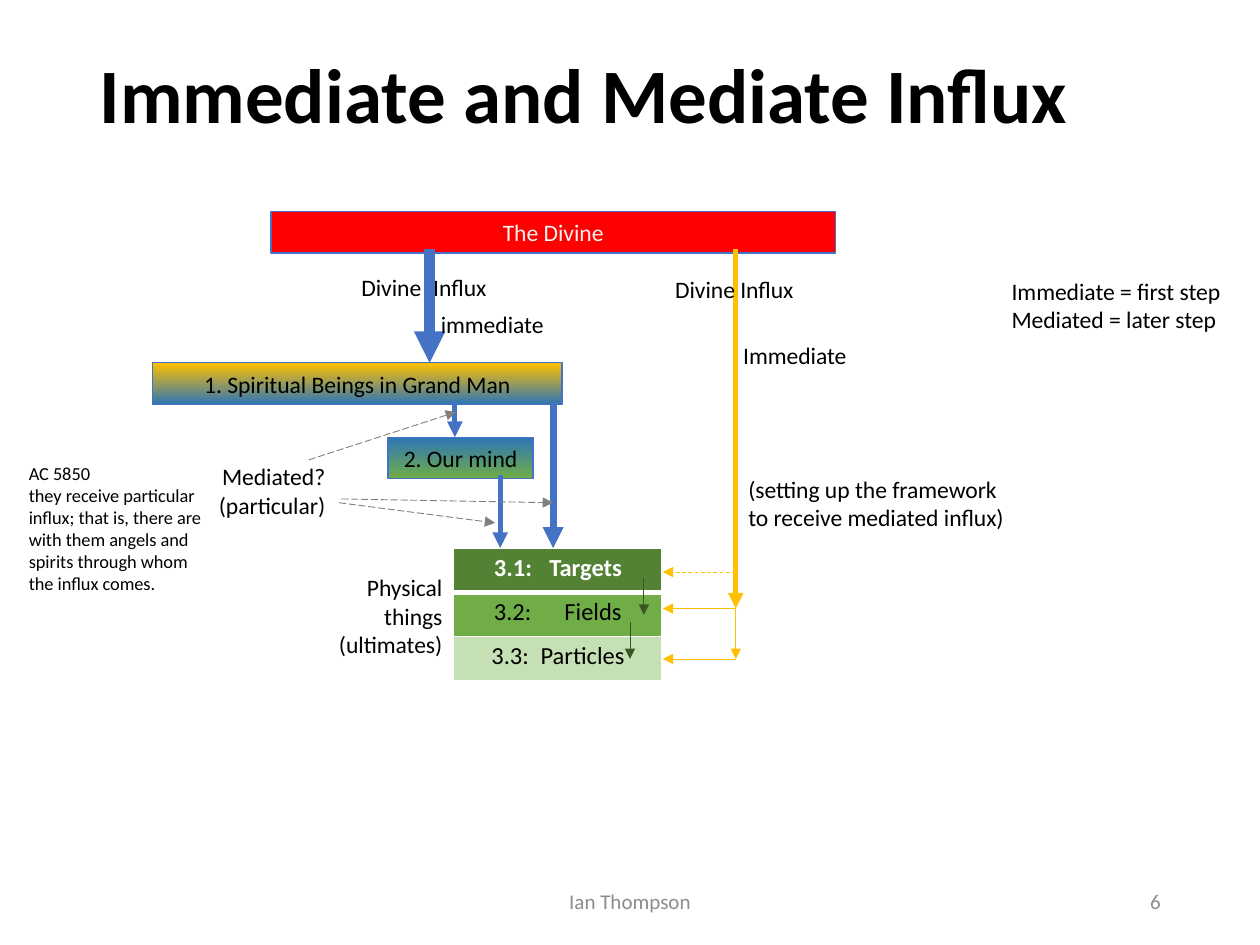
from dataclasses import dataclass

from lxml.etree import SubElement
from pptx import Presentation
from pptx.dml.color import RGBColor
from pptx.enum.dml import MSO_LINE
from pptx.enum.shapes import MSO_CONNECTOR, MSO_SHAPE
from pptx.enum.text import MSO_ANCHOR, MSO_AUTO_SIZE, PP_ALIGN
from pptx.oxml.ns import qn
from pptx.util import Emu, Pt

PX = 9144  # 100 px to the inch


@dataclass(frozen=True)
class Theme:
    font: str = "Calibri"
    black: str = "000000"
    white: str = "FFFFFF"
    pale: str = "F2F2F2"
    grey: str = "808080"
    footer: str = "8C8C8C"
    red: str = "FF0000"
    blue: str = "4472C4"
    deep_blue: str = "2E75B6"
    gold: str = "FFC000"
    green: str = "70AD47"
    dark_green: str = "548235"
    light_green: str = "C5E0B4"
    forest: str = "385723"
    title_size: float = 44
    table_size: float = 14
    text_size: float = 13.5
    footer_size: float = 12
    note_size: float = 10.5


THEME = Theme()


@dataclass(frozen=True)
class Bar:
    text: str
    frame: tuple[int, int, int, int]
    fills: tuple[str, ...]
    color: str = THEME.black


@dataclass(frozen=True)
class Label:
    paras: tuple[str, ...]
    frame: tuple[int, int, int, int]
    align: PP_ALIGN = PP_ALIGN.LEFT
    size: float = THEME.text_size
    color: str = THEME.black
    wrap: bool = False
    anchor: MSO_ANCHOR = MSO_ANCHOR.TOP
    tab: int = 0


@dataclass(frozen=True)
class Arrow:
    start: tuple[int, int]
    end: tuple[int, int]
    color: str = THEME.gold
    width: float = 0.5
    dash: MSO_LINE | None = None


@dataclass(frozen=True)
class Level:
    number: str
    name: str
    fill: str
    color: str
    indent: int
    tab: int
    rule: float = 1


BARS = (
    Bar("The Divine", (215, 168, 448, 33), (THEME.red,), THEME.pale),
    Bar("1. Spiritual Beings in Grand Man", (121, 288, 325, 33), (THEME.gold, THEME.deep_blue)),
    Bar("2. Our mind", (308, 347, 115, 33), (THEME.deep_blue, THEME.green)),
)
LEVELS = (
    Level("3.1:", "Targets", THEME.dark_green, THEME.white, 32, 44, 3),
    Level("3.2:", "Fields", THEME.green, THEME.black, 32, 56),
    Level("3.3:", "Particles", THEME.light_green, THEME.black, 30, 39),
)
LABEL_UNDER_ARROW = Label(("Divine\tInflux",), (277, 212, 120, 33), tab=57)
LABELS = (
    Label(("immediate",), (340, 241, 103, 33)),
    Label(("Mediated?", "(particular)"), (162, 362, 106, 56), PP_ALIGN.RIGHT),
    Label(("Immediate",), (580, 266, 103, 33)),
    Label(("Divine Influx",), (526, 213, 116, 33)),
    Label(("Physical\nthings", "(ultimates)"), (257, 450, 104, 78), PP_ALIGN.RIGHT),
    Label(("AC 5850", "they receive particular influx; that is, there are with them angels "
           "and spirits through whom the influx comes."),
          (13, 362, 165, 116), size=THEME.note_size, wrap=True),
    Label(("(setting up the framework\nto receive mediated influx)",), (584, 372, 225, 56)),
    Label(("Immediate = first step", "Mediated = later step"), (793, 215, 188, 56)),
    Label(("6",), (706, 695, 225, 40), PP_ALIGN.RIGHT, THEME.footer_size, THEME.footer,
          True, MSO_ANCHOR.MIDDLE),
    Label(("Ian Thompson",), (331, 695, 338, 40), PP_ALIGN.CENTER, THEME.footer_size,
          THEME.footer, True, MSO_ANCHOR.MIDDLE),
)
TRUNK_X, LEVEL_X = 584, 526  # immediate influx line, right side of the levels
ARROWS = (
    # Influx passed down through the bars
    Arrow((341, 198), (341, 288), THEME.blue, 6),
    Arrow((361, 318), (361, 347), THEME.blue, 3),
    Arrow((397, 377), (397, 435), THEME.blue, 3),
    Arrow((439, 320), (439, 435), THEME.blue, 4),
    # Immediate influx into each level
    Arrow((TRUNK_X, 198), (TRUNK_X, 483), width=3),
    Arrow((TRUNK_X, 483), (TRUNK_X, 523)),
    Arrow((TRUNK_X, 454), (LEVEL_X, 454), dash=MSO_LINE.DASH),
    Arrow((TRUNK_X, 483), (LEVEL_X, 483)),
    Arrow((TRUNK_X, 523), (LEVEL_X, 523)),
    # Pointers from "Mediated?"
    Arrow((269, 399), (393, 415), THEME.grey, dash=MSO_LINE.LONG_DASH),
    Arrow((271, 396), (439, 399), THEME.grey, dash=MSO_LINE.LONG_DASH),
    Arrow((245, 365), (362, 327), THEME.grey, dash=MSO_LINE.LONG_DASH),
    # Steps between levels
    Arrow((511, 459), (511, 488), THEME.forest),
    Arrow((500, 494), (500, 523), THEME.forest),
)


def px(*values: int) -> list[Emu]:
    return [Emu(value * PX) for value in values]


def rgb(color: str) -> RGBColor:
    return RGBColor.from_string(color)


def add_span(para, text: str, size: float, color: str, bold: bool = False) -> None:
    for index, line in enumerate(text.split("\n")):
        if index:
            para.add_line_break()
        span = para.add_run()
        span.text = line
        span.font.name, span.font.size, span.font.bold = THEME.font, Pt(size), bold
        span.font.color.rgb = rgb(color)


def set_tab(para, position: int) -> None:
    tabs = SubElement(para._p.get_or_add_pPr(), qn("a:tabLst"))
    SubElement(tabs, qn("a:tab"), pos=str(position * PX), algn="l")


def draw_title(slide, text: str) -> None:
    title = slide.shapes.title
    title.left, title.top, title.width, title.height = px(69, 40, 862, 145)
    frame = title.text_frame
    frame.vertical_anchor, frame.auto_size = MSO_ANCHOR.TOP, MSO_AUTO_SIZE.NONE
    para = frame.paragraphs[0]
    para.alignment, para.line_spacing = PP_ALIGN.LEFT, 0.9
    add_span(para, text, THEME.title_size, THEME.black, True)


def draw_bar(slide, bar: Bar) -> None:
    box = slide.shapes.add_shape(MSO_SHAPE.RECTANGLE, *px(*bar.frame))
    box.shadow.inherit = False
    box.line.color.rgb, box.line.width = rgb(THEME.blue), Pt(0.75)
    if len(bar.fills) == 1:
        box.fill.solid()
        box.fill.fore_color.rgb = rgb(bar.fills[0])
    else:
        box.fill.gradient()
        box.fill.gradient_angle = 270
        for stop, color in zip(box.fill.gradient_stops, bar.fills):
            stop.color.rgb = rgb(color)
    para = box.text_frame.paragraphs[0]
    para.alignment = PP_ALIGN.CENTER
    add_span(para, bar.text, THEME.text_size, bar.color)


def draw_label(slide, label: Label) -> None:
    frame = slide.shapes.add_textbox(*px(*label.frame)).text_frame
    frame.word_wrap, frame.vertical_anchor = label.wrap, label.anchor
    for index, text in enumerate(label.paras):
        para = frame.add_paragraph() if index else frame.paragraphs[0]
        para.alignment = label.align
        if label.tab:
            set_tab(para, label.tab)
        add_span(para, text, label.size, label.color)


def draw_arrow(slide, arrow: Arrow) -> None:
    line = slide.shapes.add_connector(MSO_CONNECTOR.STRAIGHT, *px(*arrow.start, *arrow.end))
    line.line.color.rgb, line.line.width = rgb(arrow.color), Pt(arrow.width)
    if arrow.dash:
        line.line.dash_style = arrow.dash
    SubElement(line.line._get_or_add_ln(), qn("a:tailEnd"), type="triangle")
    SubElement(line._element.spPr, qn("a:effectLst"))


def set_border(cell, side: str, width: float) -> None:
    border = SubElement(cell._tc.get_or_add_tcPr(), qn(f"a:ln{side}"), w=str(Pt(width)))
    SubElement(SubElement(border, qn("a:solidFill")), qn("a:srgbClr"), val=THEME.white)


def draw_levels(slide) -> None:
    table = slide.shapes.add_table(len(LEVELS), 1, *px(360, 435, 165, 105)).table
    table.first_row = table.horz_banding = False
    above = 1
    for row, level in enumerate(LEVELS):
        cell = table.cell(row, 0)
        for side, width in (("L", 1), ("R", 1), ("T", above), ("B", level.rule)):
            set_border(cell, side, width)
        above = level.rule
        cell.fill.solid()
        cell.fill.fore_color.rgb = rgb(level.fill)
        cell.margin_left, cell.margin_right, cell.margin_top, cell.margin_bottom = px(
            level.indent, 7, 4, 4)
        para = cell.text_frame.paragraphs[0]
        set_tab(para, level.tab)
        add_span(para, f"{level.number}\t{level.name}", THEME.table_size, level.color, row == 0)


def main() -> None:
    deck = Presentation()
    deck.slide_width, deck.slide_height = px(1000, 750)
    page = deck.slides.add_slide(deck.slide_layouts[5])
    draw_title(page, "Immediate and Mediate Influx")
    for bar in BARS:
        draw_bar(page, bar)
    draw_levels(page)
    draw_label(page, LABEL_UNDER_ARROW)
    for arrow in ARROWS:
        draw_arrow(page, arrow)
    for label in LABELS:
        draw_label(page, label)
    deck.save("out.pptx")


if __name__ == "__main__":
    main()
